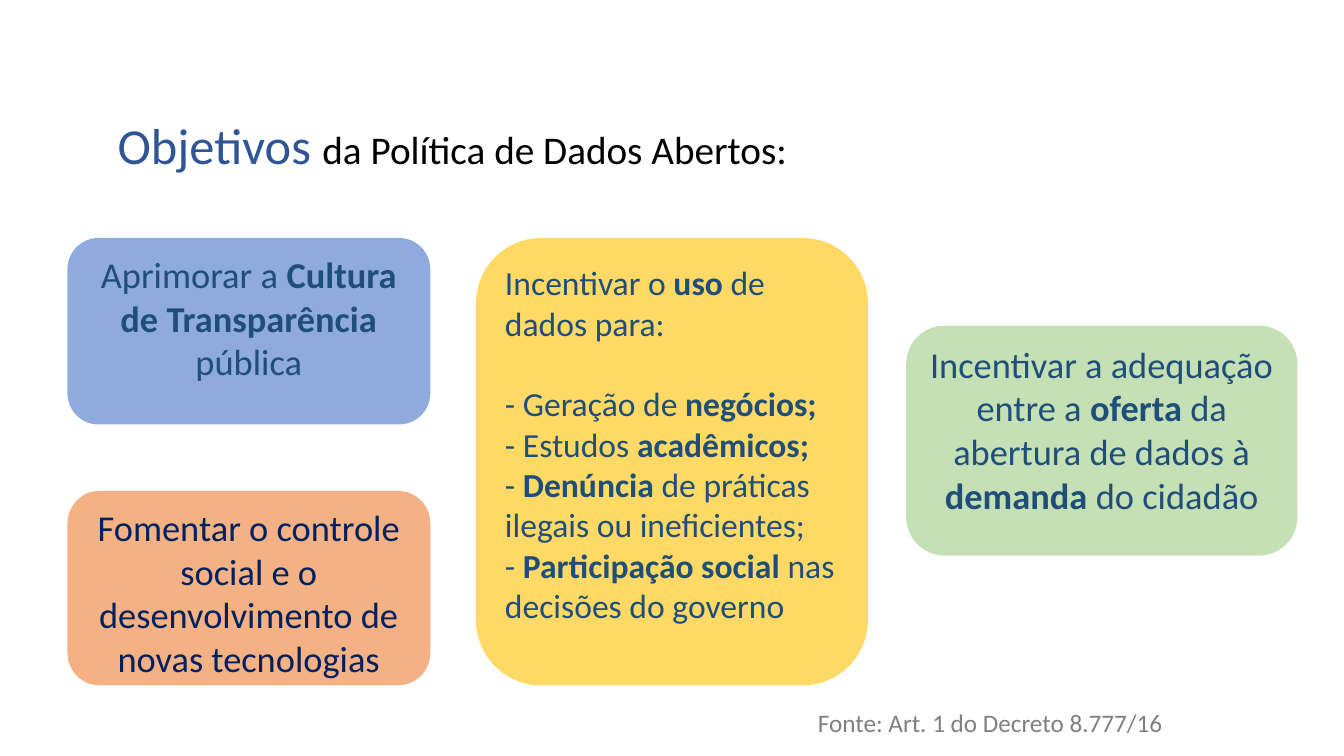
from pptx import Presentation
from pptx.dml.color import RGBColor
from pptx.enum import shapes, text
from pptx.util import Pt

COLORS = {
    "title": "2F5597", "black": "000000", "ink": "1F4E79", "navy": "002060",
    "source": "808080", "blue": "8FAADC", "orange": "F4B183",
    "yellow": "FFD966", "green": "C5E0B4",
}
LEFT, CENTER, RIGHT = text.PP_ALIGN.LEFT, text.PP_ALIGN.CENTER, text.PP_ALIGN.RIGHT


def color(name):
    return RGBColor.from_string(COLORS[name])


class ObjectivesSlide:
    font = "Calibri"

    def __init__(self, prs):
        self.slide = prs.slides.add_slide(prs.slide_layouts[6])

    def style(self, font, size, ink):
        font.name, font.size = self.font, Pt(size)
        font.color.rgb = color(ink)

    def label(self, box):
        frame = self.slide.shapes.add_textbox(*map(Pt, box)).text_frame
        frame.word_wrap = True
        return frame

    def title(self, box, parts):
        """Write one line whose (words, size, ink) parts differ in style."""
        frame = self.label(box)
        frame.vertical_anchor = text.MSO_ANCHOR.MIDDLE
        line = frame.paragraphs[0]
        line.line_spacing = 0.9
        for words, size, ink in parts:
            run = line.add_run()
            run.text = words
            self.style(run.font, size, ink)

    def source(self, box, words):
        frame = self.label(box)
        frame.word_wrap = False
        line = frame.paragraphs[0]
        line.text, line.alignment = words, RIGHT
        self.style(line.font, 18, "source")

    def card(self, box, fill, lines, ink="ink", size=26, align=CENTER, list_gap=0):
        """Draw a rounded card; words between asterisks are bold.

        list_gap is the space between the first line and the list below it.
        """
        card = self.slide.shapes.add_shape(
            shapes.MSO_SHAPE.ROUNDED_RECTANGLE, *map(Pt, box))
        card.shadow.inherit = False
        card.fill.solid()
        card.fill.fore_color.rgb = color(fill)
        card.line.fill.background()
        frame = card.text_frame
        frame.word_wrap = True
        frame.vertical_anchor = text.MSO_ANCHOR.TOP
        for i, words in enumerate(lines):
            line = frame.paragraphs[0] if i == 0 else frame.add_paragraph()
            line.alignment = align
            if i == 1:
                line.space_before = Pt(list_gap)
            self.style(line.font, size, ink)
            for j, part in enumerate(words.split("*")):
                if part:
                    run = line.add_run()
                    run.text = part
                    self.style(run.font, size, ink)
                    run.font.bold = j % 2 == 1


def main():
    prs = Presentation()
    prs.slide_width, prs.slide_height = Pt(960), Pt(540)
    page = ObjectivesSlide(prs)

    page.title((77, 81.4, 828, 49), [
        ("Objetivos ", 36, "title"),
        ("da Política de Dados Abertos:", 28, "black"),
    ])
    page.card((48.2, 170, 259.2, 133.2), "blue",
              ["Aprimorar a *Cultura de Transparência* pública"])
    page.card((48.2, 350.6, 259.2, 139), "orange",
              ["Fomentar o controle social e o desenvolvimento de novas tecnologias"],
              ink="navy")
    page.card((340, 170, 280, 319.6), "yellow", [
        "Incentivar o *uso* de dados para:",
        "- Geração de *negócios;*",
        "- Estudos *acadêmicos;*",
        "- *Denúncia* de práticas ilegais ou ineficientes;",
        "- *Participação social* nas decisões do governo",
    ], size=24, align=LEFT, list_gap=29)
    page.card((647.3, 232.6, 279.4, 164.2), "green",
              ["Incentivar a adequação entre a *oferta* da abertura de dados à "
               "*demanda* do cidadão"])
    page.source((574, 502, 263.5, 29), "Fonte: Art. 1 do Decreto 8.777/16")

    prs.save("out.pptx")


if __name__ == "__main__":
    main()
